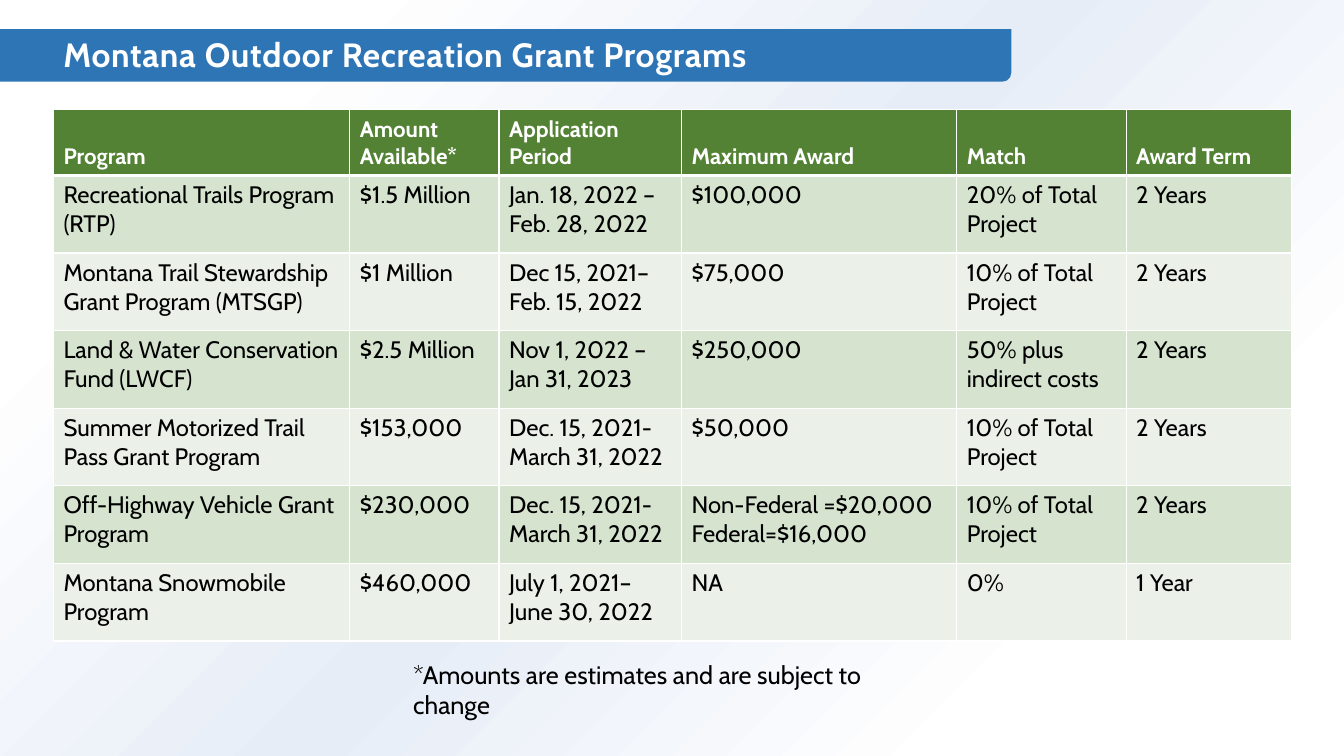
from lxml import etree
from pptx import Presentation
from pptx import util as u
from pptx.dml.color import RGBColor
from pptx.enum import shapes, text
from pptx.oxml.ns import qn

TITLE = "Montana Outdoor Recreation Grant Programs"
FOOTNOTE = "*Amounts are estimates and are subject to change"
COLUMN_WIDTHS = [2.94, 1.48, 1.81, 2.73, 1.68, 1.64]
HEADER_HEIGHT, ROW_HEIGHT = 0.65, 0.77
GRANTS = [
    ["Program", "Amount Available*", "Application Period", "Maximum Award",
     "Match", "Award Term"],
    ["Recreational Trails Program (RTP)", "$1.5 Million",
     "Jan. 18, 2022 – Feb. 28, 2022", "$100,000", "20% of Total Project", "2 Years"],
    ["Montana Trail Stewardship Grant Program (MTSGP)", "$1 Million",
     "Dec 15, 2021–\nFeb. 15, 2022", "$75,000", "10% of Total Project", "2 Years"],
    ["Land & Water Conservation Fund (LWCF)", "$2.5 Million",
     "Nov 1, 2022 – Jan 31, 2023", "$250,000", "50% plus indirect costs", "2 Years"],
    ["Summer Motorized Trail Pass Grant Program", "$153,000",
     "Dec. 15, 2021- March 31, 2022", "$50,000", "10% of Total Project", "2 Years"],
    ["Off-Highway Vehicle Grant Program", "$230,000",
     "Dec. 15, 2021- March 31, 2022", "Non-Federal =$20,000\nFederal=$16,000",
     "10% of Total Project", "2 Years"],
    ["Montana Snowmobile Program", "$460,000",
     "July 1, 2021–\nJune 30, 2022", "NA", "0%", "1 Year"],
]


def rgb(value):
    return RGBColor.from_string(value)


def add_color(parent, value):
    etree.SubElement(parent, qn("a:srgbClr"), val=value)


class GrantSlide:
    font = "Cabin"
    white, black = "FFFFFF", "000000"
    blue, green = "2E75B6", "548235"
    bands = ["D5E3CF", "EBF1E9"]

    def __init__(self, prs):
        self.s = prs.slides.add_slide(prs.slide_layouts[6])

    def shape(self, kind, box, color):
        sp = self.s.shapes.add_shape(kind, *map(u.Inches, box))
        sp.shadow.inherit = False
        sp.fill.solid()
        sp.fill.fore_color.rgb = rgb(color)
        sp.line.fill.background()
        return sp

    def backdrop(self, box, stops, angle):
        """Rectangle with a linear gradient of (percent, colour) stops."""
        sp = self.shape(shapes.MSO_SHAPE.RECTANGLE, box, self.white)
        solid = sp._element.spPr.find(qn("a:solidFill"))
        grad = etree.Element(qn("a:gradFill"), rotWithShape="1")
        stop_list = etree.SubElement(grad, qn("a:gsLst"))
        for percent, color in stops:
            add_color(etree.SubElement(stop_list, qn("a:gs"),
                                       pos=str(percent * 1000)), color)
        etree.SubElement(grad, qn("a:lin"), ang=str(angle * 60000), scaled="0")
        solid.getparent().replace(solid, grad)

    def format_runs(self, tf, size, color, bold=False):
        for p in tf.paragraphs:
            for r in p.runs:
                r.font.name = self.font
                r.font.size = u.Pt(size)
                r.font.bold = bold
                r.font.color.rgb = rgb(color)

    def text(self, box, words, size, color, bold=False,
             anchor=text.MSO_ANCHOR.TOP):
        tf = self.s.shapes.add_textbox(*map(u.Inches, box)).text_frame
        tf.word_wrap = True
        tf.vertical_anchor = anchor
        tf.text = words
        self.format_runs(tf, size, color, bold)
        return tf

    def cell_borders(self, cell, bottom, top):
        tc_pr = cell._tc.get_or_add_tcPr()
        for side, width in (("L", 1), ("R", 1), ("T", top), ("B", bottom)):
            ln = etree.SubElement(tc_pr, qn(f"a:ln{side}"), w=str(u.Pt(width)))
            add_color(etree.SubElement(ln, qn("a:solidFill")), self.white)

    def table(self, left, top, widths, rows):
        heights = [HEADER_HEIGHT] + [ROW_HEIGHT] * (len(rows) - 1)
        box = (left, top, sum(widths), sum(heights))
        table = self.s.shapes.add_table(len(rows), len(widths),
                                        *map(u.Inches, box)).table
        for column, width in zip(table.columns, widths):
            column.width = u.Inches(width)
        for i, (row, height) in enumerate(zip(rows, heights)):
            table.rows[i].height = u.Inches(height)
            header = i == 0
            for j, words in enumerate(row):
                cell = table.cell(i, j)
                cell.text = words
                self.cell_borders(cell, bottom=3 if header else 1,
                                  top=3 if i == 1 else 1)
                cell.fill.solid()
                if header:
                    cell.vertical_anchor = text.MSO_ANCHOR.BOTTOM
                    cell.fill.fore_color.rgb = rgb(self.green)
                    self.format_runs(cell.text_frame, 16, self.white, True)
                else:
                    cell.fill.fore_color.rgb = rgb(self.bands[(i - 1) % 2])
                    self.format_runs(cell.text_frame, 17, self.black)


def main():
    prs = Presentation()
    prs.slide_width, prs.slide_height = u.Inches(13.33), u.Inches(7.5)
    slide = GrantSlide(prs)
    slide.backdrop((0, -0.04, 13.33, 7.54),
                   [(19, "FFFFFF"), (50, "E7EDF7"), (83, "FFFFFF")], 225)
    slide.shape(shapes.MSO_SHAPE.ROUND_2_DIAG_RECTANGLE,
                (-0.19, 0.29, 10.22, 0.52), slide.blue)
    title = slide.text((0.53, 0.33, 12.28, 0.47), TITLE, 24, slide.white, True,
                       text.MSO_ANCHOR.MIDDLE)
    p = title.paragraphs[0]
    p.line_spacing = 0.9
    p.runs[0].font._element.set("spc", "50")
    slide.table(0.53, 1.09, COLUMN_WIDTHS, GRANTS)
    slide.text((4, 6.49, 5.34, 0.4), FOOTNOTE, 18, slide.black)
    prs.save("out.pptx")


if __name__ == "__main__":
    main()
